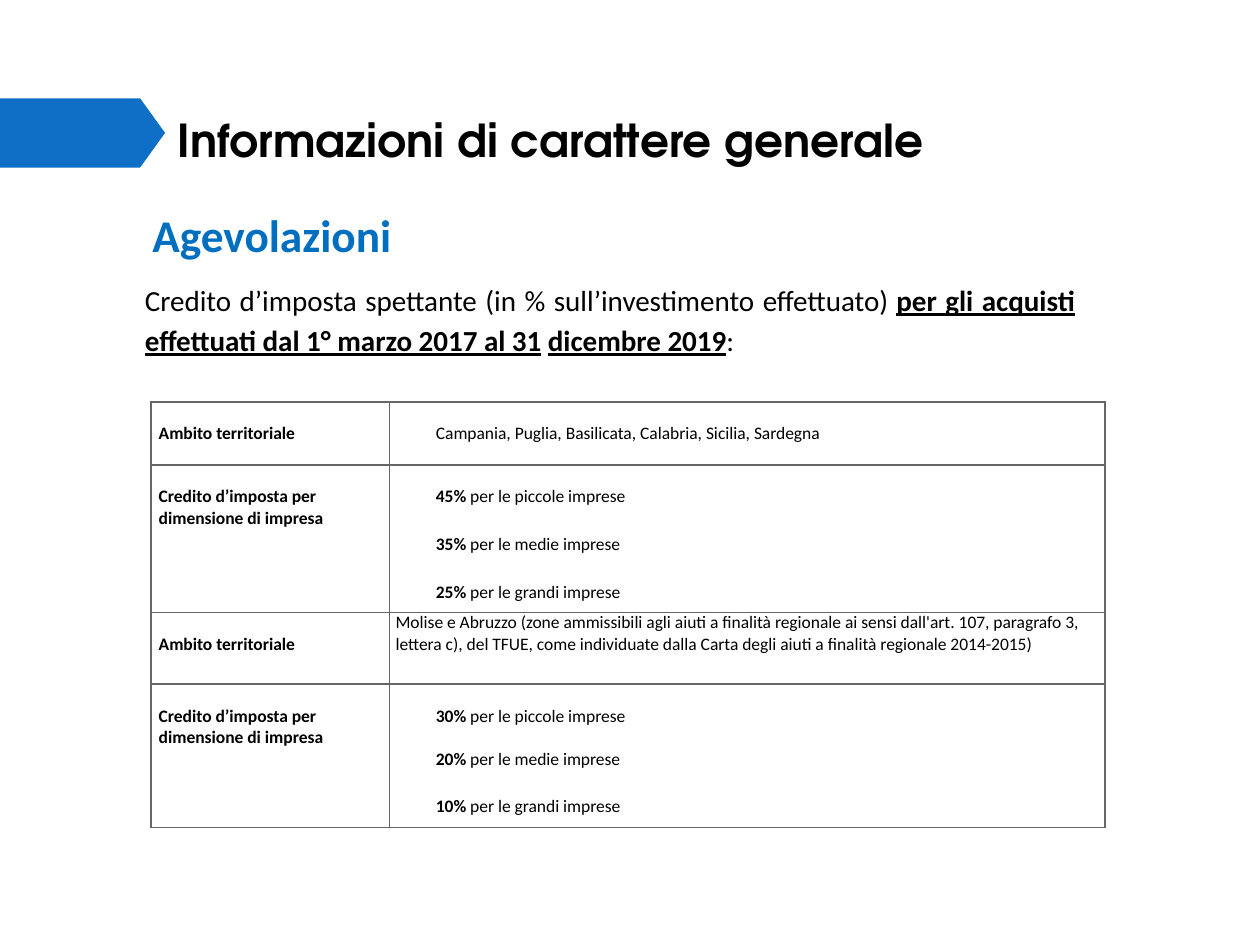
from dataclasses import dataclass
from typing import NamedTuple

from lxml.etree import SubElement
from pptx import Presentation
from pptx.dml.color import RGBColor
from pptx.enum.shapes import MSO_SHAPE as Preset
from pptx.enum.text import MSO_ANCHOR as Anchor, MSO_AUTO_SIZE as AutoSize, PP_ALIGN as Align
from pptx.oxml.ns import qn
from pptx.util import Inches, Pt


@dataclass(frozen=True)
class Theme:
    arrow: RGBColor = RGBColor(0x0F, 0x6F, 0xC6)
    heading: RGBColor = RGBColor(0x00, 0x6F, 0xC0)
    text: RGBColor = RGBColor(0, 0, 0)
    border: str = "666666"
    border_width: int = Pt(1)
    title_font: str = "TeX Gyre Adventor"
    body_font: str = "Calibri"
    heading_size: float = 25.9
    body_size: float = 16.6
    table_size: float = 10


class Run(NamedTuple):
    text: str
    bold: bool = False
    underline: bool = False


class Line(NamedTuple):
    runs: list[Run]
    space_before: float = 0


class CellText(NamedTuple):
    lines: list[Line]
    left: float
    top: float = 0.17


class Row(NamedTuple):
    height: float
    label: str
    content: CellText


THEME = Theme()
LABEL_INDENT, CONTENT_INDENT = 0.06, 0.37
COLUMN_WIDTHS = (1.89, 5.68)


def credit_rates(rates: tuple[str, str, str], gaps: tuple[float, float]) -> CellText:
    """List the credit rate of each company size, with the gaps in points between them."""
    sizes = ("piccole", "medie", "grandi")
    lines = [Line([Run(f"{rate} ", bold=True), Run(f"per le {size} imprese")], gap)
             for rate, size, gap in zip(rates, sizes, (0, *gaps))]
    return CellText(lines, CONTENT_INDENT)


AREA_LABEL = "Ambito territoriale"
CREDIT_LABEL = "Credito d’imposta per dimensione di impresa"
ROWS = [
    Row(0.5, AREA_LABEL, CellText(
        [Line([Run("Campania, Puglia, Basilicata, Calabria, Sicilia, Sardegna")])],
        CONTENT_INDENT)),
    Row(1.17, CREDIT_LABEL, credit_rates(("45%", "35%", "25%"), (15.1, 15.1))),
    Row(0.57, AREA_LABEL, CellText(
        [Line([Run("Molise e Abruzzo (zone ammissibili agli aiuti a finalità regionale ai sensi "
                   "dall'art. 107, paragrafo 3, lettera c), del TFUE, come individuate dalla "
                   "Carta degli aiuti a finalità regionale 2014-2015)")])],
        left=0.05, top=0)),
    Row(1.14, CREDIT_LABEL, credit_rates(("30%", "20%", "10%"), (12.7, 15))),
]
INTRODUCTION = [
    Run("Credito d’imposta spettante (in % sull’investimento effettuato) "),
    Run("per gli acquisti effettuati dal 1° marzo 2017 al 31", bold=True, underline=True),
    Run(" ", bold=True),
    Run("dicembre 2019", bold=True, underline=True),
    Run(":"),
]


def write(paragraph, runs: list[Run], *, size: float, font: str = THEME.body_font,
          color: RGBColor = THEME.text, align=Align.LEFT,
          space_before: float = 0, line_spacing: float = 1.0) -> None:
    paragraph.alignment = align
    paragraph.space_before = Pt(space_before)
    paragraph.line_spacing = line_spacing
    for item in runs:
        run = paragraph.add_run()
        run.text = item.text
        run.font.name = font
        run.font.size = Pt(size)
        run.font.bold = item.bold
        run.font.underline = item.underline
        run.font.color.rgb = color


def remove_bullet(paragraph, indent: float = 0) -> None:
    properties = paragraph._p.get_or_add_pPr()
    properties.set("marL", str(Inches(indent)))
    properties.set("indent", "0")
    SubElement(properties, qn("a:buNone"))


def place(shape, left: float, top: float, width: float, height: float) -> None:
    shape.left, shape.top = Inches(left), Inches(top)
    shape.width, shape.height = Inches(width), Inches(height)


def add_arrow(slide) -> None:
    arrow = slide.shapes.add_shape(Preset.PENTAGON, 0, Inches(0.78), Inches(1.31), Inches(0.55))
    arrow.adjustments[0] = 0.36
    arrow.shadow.inherit = False
    arrow.fill.solid()
    arrow.fill.fore_color.rgb = THEME.arrow
    arrow.line.fill.background()


def fill_title(title) -> None:
    place(title, 0.61, 0.84, 8.76, 0.54)
    frame = title.text_frame
    frame.auto_size = AutoSize.NONE
    frame.vertical_anchor = Anchor.MIDDLE
    frame.margin_left = Inches(0.8)
    frame.margin_top = frame.margin_bottom = 0
    write(frame.paragraphs[0], [Run("Informazioni di carattere generale", bold=True)],
          size=THEME.heading_size, font=THEME.title_font)


def fill_body(body) -> None:
    place(body, 0.6, 1.59, 8.76, 5.22)
    frame = body.text_frame
    frame.auto_size = AutoSize.NONE
    frame.vertical_anchor = Anchor.TOP
    frame.margin_right = Inches(0.83)
    heading, introduction = frame.paragraphs[0], frame.add_paragraph()
    write(heading, [Run("Agevolazioni", bold=True)],
          size=THEME.heading_size, color=THEME.heading)
    write(introduction, INTRODUCTION, size=THEME.body_size, align=Align.JUSTIFY,
          space_before=9.1, line_spacing=1.15)
    remove_bullet(heading, indent=0.51)
    remove_bullet(introduction, indent=0.45)


def set_borders(cell) -> None:
    properties = cell._tc.get_or_add_tcPr()
    for position, side in enumerate(("a:lnL", "a:lnR", "a:lnT", "a:lnB")):
        line = properties.makeelement(qn(side), {"w": str(THEME.border_width)})
        properties.insert(position, line)
        fill = SubElement(line, qn("a:solidFill"))
        SubElement(fill, qn("a:srgbClr"), val=THEME.border)


def fill_cell(cell, content: CellText) -> None:
    cell.margin_left, cell.margin_top = Inches(content.left), Inches(content.top)
    cell.margin_right = cell.margin_bottom = 0
    cell.vertical_anchor = Anchor.TOP
    cell.fill.background()
    set_borders(cell)
    frame = cell.text_frame
    for index, line in enumerate(content.lines):
        paragraph = frame.add_paragraph() if index else frame.paragraphs[0]
        write(paragraph, line.runs, size=THEME.table_size, space_before=line.space_before)


def add_credit_table(slide) -> None:
    height = sum(row.height for row in ROWS)
    table = slide.shapes.add_table(len(ROWS), len(COLUMN_WIDTHS), Inches(1.2), Inches(3.19),
                                   Inches(sum(COLUMN_WIDTHS)), Inches(height)).table
    table.first_row = table.horz_banding = False
    for column, width in zip(table.columns, COLUMN_WIDTHS):
        column.width = Inches(width)
    for index, row in enumerate(ROWS):
        table.rows[index].height = Inches(row.height)
        label = CellText([Line([Run(row.label, bold=True)])], LABEL_INDENT)
        fill_cell(table.cell(index, 0), label)
        fill_cell(table.cell(index, 1), row.content)


def main() -> None:
    presentation = Presentation()
    presentation.slide_width, presentation.slide_height = Inches(10), Inches(7.5)
    slide = presentation.slides.add_slide(presentation.slide_layouts[1])
    add_arrow(slide)
    fill_title(slide.shapes.title)
    fill_body(slide.placeholders[1])
    add_credit_table(slide)
    presentation.save("out.pptx")


if __name__ == "__main__":
    main()
